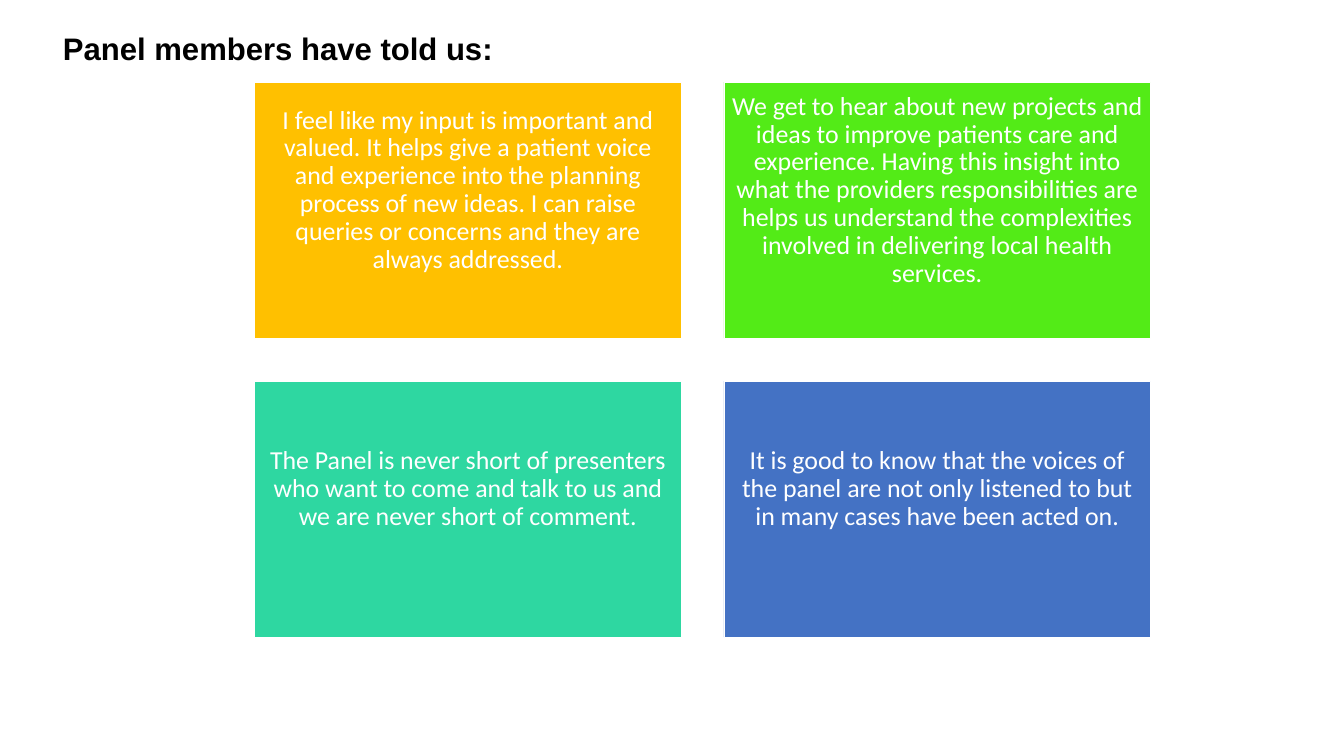
"""Build a slide of four quotations from panel members."""
from typing import NamedTuple

from pptx import Presentation
from pptx.dml.color import RGBColor
from pptx.enum.shapes import MSO_SHAPE
from pptx.enum.text import MSO_ANCHOR, PP_ALIGN
from pptx.util import Inches, Pt


class Quote(NamedTuple):
    words: str
    fill: str


QUOTES = [
    Quote("I feel like my input is important and valued. It helps give a patient voice "
          "and experience into the planning process of new ideas. I can raise queries "
          "or concerns and they are always addressed.", "FFC000"),
    Quote("We get to hear about new projects and ideas to improve patients care and "
          "experience. Having this insight into what the providers responsibilities are "
          "helps us understand the complexities involved in delivering local health "
          "services.", "53EB17"),
    Quote("The Panel is never short of presenters who want to come and talk to us and "
          "we are never short of comment.", "2ED7A1"),
    Quote("It is good to know that the voices of the panel are not only listened to but "
          "in many cases have been acted on.", "4472C4"),
]
COLUMNS = 2
GRID_LEFT, GRID_TOP = 5.05, 1.63
CARD_WIDTH, CARD_HEIGHT, GAP = 8.46, 5.08, 0.85
CARD_FRAME = {
    "word_wrap": True,
    "vertical_anchor": MSO_ANCHOR.MIDDLE,
    "margin_left": Inches(0.15),
    "margin_right": Inches(0.15),
    "margin_top": Inches(0.15),
    "margin_bottom": Inches(0.93),
}
HEADING_FONT = {"name": "Arial", "size": Pt(44.4), "bold": True}
QUOTE_FONT = {"name": "Calibri", "size": Pt(37)}


def rgb(colour: str) -> RGBColor:
    return RGBColor.from_string(colour)


def apply(target, values: dict) -> None:
    for name, value in values.items():
        setattr(target, name, value)


def write(frame, words: str, font: dict, colour: str, align: PP_ALIGN) -> None:
    paragraph = frame.paragraphs[0]
    apply(paragraph, {"alignment": align, "line_spacing": 0.9})
    run = paragraph.add_run()
    run.text = words
    apply(run.font, font)
    run.font.color.rgb = rgb(colour)


def add_heading(slide, words: str) -> None:
    heading = slide.shapes.add_textbox(Inches(1.15), Inches(0.62), Inches(8.94), Inches(1.18))
    heading.text_frame.word_wrap = True
    write(heading.text_frame, words, HEADING_FONT, "000000", PP_ALIGN.LEFT)


def add_quote(slide, quote: Quote, position: int) -> None:
    row, column = divmod(position, COLUMNS)
    card = slide.shapes.add_shape(
        MSO_SHAPE.RECTANGLE,
        Inches(GRID_LEFT + column * (CARD_WIDTH + GAP)),
        Inches(GRID_TOP + row * (CARD_HEIGHT + GAP)),
        Inches(CARD_WIDTH), Inches(CARD_HEIGHT))
    card.shadow.inherit = False
    card.fill.solid()
    card.fill.fore_color.rgb = rgb(quote.fill)
    card.line.color.rgb = rgb("FFFFFF")
    card.line.width = Pt(1)
    apply(card.text_frame, CARD_FRAME)
    write(card.text_frame, quote.words, QUOTE_FONT, "FFFFFF", PP_ALIGN.CENTER)


def main() -> None:
    deck = Presentation()
    deck.slide_width, deck.slide_height = Inches(26.66), Inches(15)
    slide = deck.slides.add_slide(deck.slide_layouts[6])
    add_heading(slide, "Panel members have told us:")
    for position, quote in enumerate(QUOTES):
        add_quote(slide, quote, position)
    deck.save("out.pptx")


if __name__ == "__main__":
    main()
